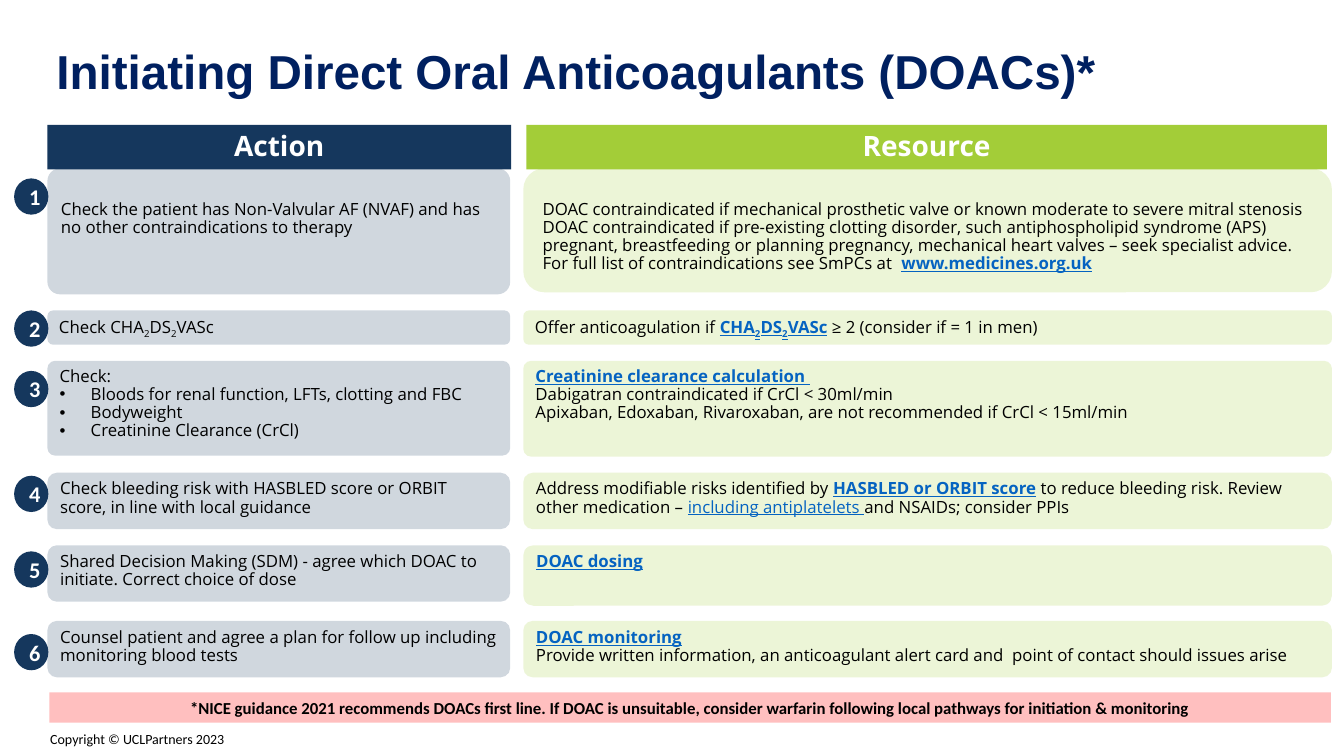
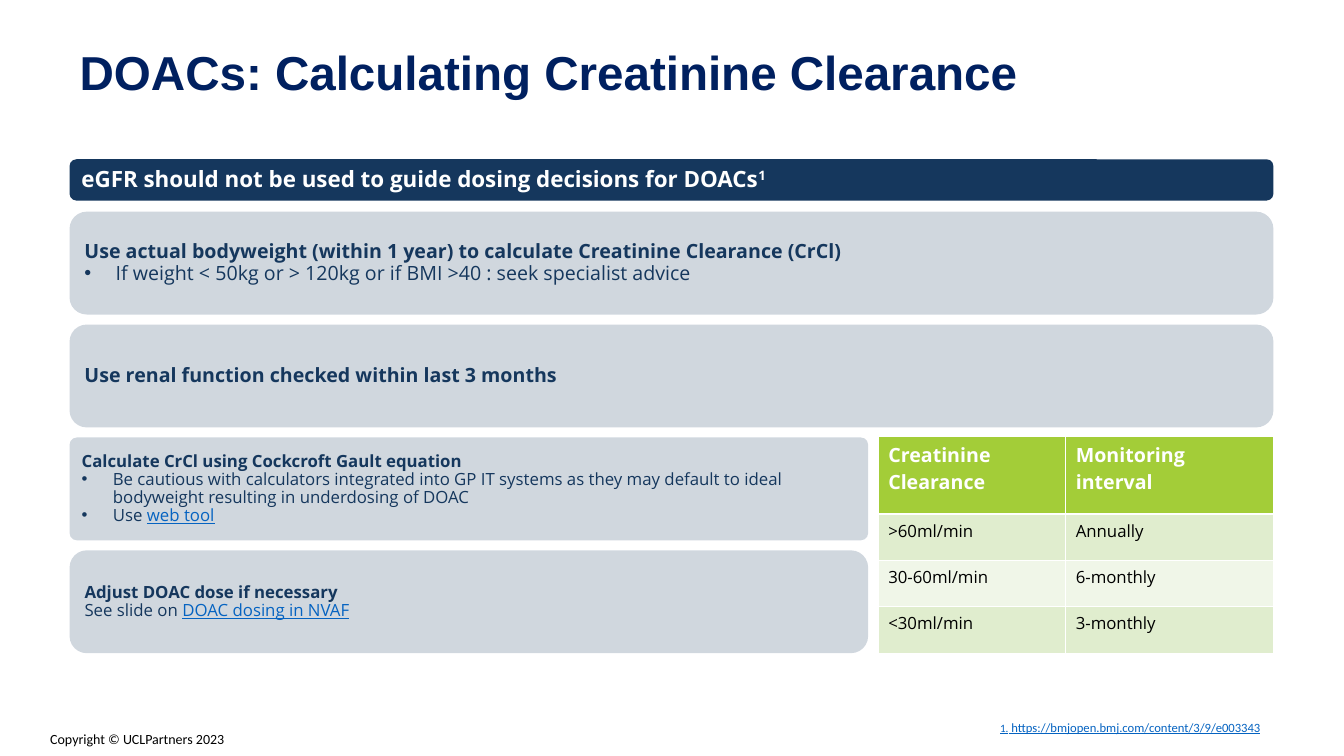
from pptx import Presentation
from pptx.dml.color import RGBColor
from pptx.enum.shapes import MSO_SHAPE as Shape
from pptx.enum.text import MSO_ANCHOR as Anchor, PP_ALIGN as Align
from pptx.oxml.ns import qn
from pptx.util import Inches, Pt
from lxml.etree import SubElement

# Shared look
NAVY = RGBColor(0x15, 0x37, 0x5D)
TITLE_BLUE = RGBColor(0x00, 0x20, 0x60)
LIME = RGBColor(0xA3, 0xCD, 0x38)
LINK_BLUE = RGBColor(0x05, 0x63, 0xC1)
RED = RGBColor(0xFF, 0x00, 0x00)
BLACK = RGBColor(0x00, 0x00, 0x00)
WHITE = RGBColor(0xFF, 0xFF, 0xFF)
BAND_FILLS = [RGBColor(0xE0, 0xED, 0xCE), RGBColor(0xF0, 0xF6, 0xE8)]
SANS, PLAIN, HEADING = "Open Sans", "Calibri", "Arial"
TINT = 20
BULLET = "•"
HANG = Inches(0.31)
BODY_SPACING = 0.9

# Run styles, laid over the base format of a box
LINK = {"color": LINK_BLUE, "underline": True}
BOLD_LINK = {**LINK, "bold": True}
BOLD = {"bold": True}
SUB = {"baseline": -25}
LINK_SUB = {**BOLD_LINK, **SUB}
SUPER = {"baseline": 30}

COPYRIGHT = "Copyright © UCLPartners 2023"

# Content of slide 1: a paragraph is a list of runs, a run is text or (text, style)
STEPS_TITLE = "Initiating Direct Oral Anticoagulants (DOACs)*"
STEPS_NOTE = ("*NICE guidance 2021 recommends DOACs first line. If DOAC is unsuitable, consider "
              "warfarin following local pathways for initiation & monitoring")
COLUMNS = [
    {"name": "Action", "left": 0.47, "width": 4.59, "header_left": 0.47,
     "header_width": 4.6, "color": NAVY},
    {"name": "Resource", "left": 5.19, "width": 8.02, "header_left": 5.22,
     "header_width": 7.94, "color": LIME},
]
STEPS = [
    {"top": 1.67, "heights": (1.25, 1.23), "badge": 0.1, "corners": (0.1, 0.17),
     "insets": ((0.1, 0.29), (0.13, 0.26)),
     "cells": (
         [["Check the patient has Non-Valvular AF (NVAF) and has no other "
           "contraindications to therapy"]],
         [["DOAC contraindicated if mechanical prosthetic valve or known moderate to "
           "severe mitral stenosis"],
          ["DOAC contraindicated if pre-existing clotting disorder, such antiphospholipid "
           "syndrome (APS) pregnant, breastfeeding or planning pregnancy, mechanical heart "
           "valves – seek specialist advice."],
          ["For full list of contraindications see SmPCs at  ",
           ("www.medicines.org.uk", BOLD_LINK)]])},
    {"top": 3.08, "heights": (0.34, 0.34), "badge": 0,
     "cells": (
         [["Check CHA", ("2", SUB), "DS", ("2", SUB), "VASc"]],
         [["Offer anticoagulation if ", ("CHA", BOLD_LINK), ("2", LINK_SUB),
           ("DS", BOLD_LINK), ("2", LINK_SUB), ("VASc", BOLD_LINK),
           " ≥ 2 (consider if = 1 in men)"]])},
    {"top": 3.58, "heights": (0.94, 0.95), "badge": 0.1, "corners": (0.08, 0.08),
     "cells": (
         [["Check:"],
          [BULLET, "Bloods for renal function, LFTs, clotting and FBC"],
          [BULLET, "Bodyweight"],
          [BULLET, "Creatinine Clearance (CrCl)"]],
         [[("Creatinine clearance calculation ", BOLD_LINK)],
          ["Dabigatran contraindicated if CrCl < 30ml/min"],
          ["Apixaban, Edoxaban, Rivaroxaban, are not recommended if CrCl < 15ml/min"]])},
    {"top": 4.69, "heights": (0.56, 0.56), "badge": 0.03,
     "cells": (
         [["Check bleeding risk with HASBLED score or ORBIT score, in line with local guidance"]],
         [["Address modifiable risks identified by ", ("HASBLED or ORBIT score", BOLD_LINK),
           " to reduce bleeding risk. Review other medication – ",
           ("including antiplatelets ", LINK), "and NSAIDs; consider PPIs"]])},
    {"top": 5.41, "heights": (0.56, 0.6), "badge": 0.06,
     "cells": (
         [["Shared Decision Making (SDM) - agree which DOAC to initiate. Correct choice of dose"]],
         [[("DOAC dosing", BOLD_LINK)]])},
    {"top": 6.16, "heights": (0.56, 0.56), "badge": 0.13,
     "cells": (
         [["Counsel patient and agree a plan for follow up including monitoring blood tests"]],
         [[("DOAC monitoring", BOLD_LINK)],
          ["Provide written information, an anticoagulant alert card and  point of contact "
           "should issues arise"]])},
]

# Content of slide 2
CLEARANCE_TITLE = "DOACs: Calculating Creatinine Clearance"
KEY_MESSAGE = [["eGFR should not be used to guide dosing decisions for DOACs", ("1", SUPER)]]
REFERENCE = [[("1.", {"size": Pt(8)}), " https://bmjopen.bmj.com/content/3/9/e003343"]]
FULL_WIDTH, PART_WIDTH = 11.94, 7.92
PANELS = [
    {"width": FULL_WIDTH, "size": 14, "text": [
        [("Use actual bodyweight (within 1 year) to calculate Creatinine Clearance (CrCl)", BOLD)],
        [BULLET, "If weight < 50kg or > 120kg or if BMI >40 : seek specialist advice"]]},
    {"width": FULL_WIDTH, "size": 14, "text": [
        [("Use renal function checked within last 3 months", BOLD)]]},
    {"width": PART_WIDTH, "size": 12, "corner": 0.07, "text": [
        [("Calculate CrCl using Cockcroft Gault equation", BOLD)],
        [BULLET, "Be cautious with calculators integrated into GP IT systems as they may "
                 "default to ideal bodyweight resulting in underdosing of DOAC"],
        [BULLET, "Use ", ("web tool", LINK)]]},
    {"width": PART_WIDTH, "size": 12, "text": [
        [("Adjust DOAC dose if necessary", BOLD)],
        ["See slide on ", ("DOAC dosing in NVAF", LINK)]]},
]
INTERVALS = [
    ("Creatinine Clearance", "Monitoring interval"),
    (">60ml/min", "Annually"),
    ("30-60ml/min", "6-monthly"),
    ("<30ml/min", "3-monthly"),
]


def base_format(size, color=BLACK, name=SANS, bold=False):
    return {"size": Pt(size), "name": name, "bold": bold, "color": color}


def write_run(paragraph, text, formats):
    run = paragraph.add_run()
    run.text = text
    for key, value in formats.items():
        if key == "color":
            run.font.color.rgb = value
        elif key == "baseline":
            run.font._element.set("baseline", str(value * 1000))
        else:
            setattr(run.font, key, value)


def write_text(frame, paragraphs, formats, align=Align.LEFT, spacing=None):
    for index, runs in enumerate(paragraphs):
        paragraph = frame.add_paragraph() if index else frame.paragraphs[0]
        if runs[0] == BULLET:
            properties = paragraph._p.get_or_add_pPr()
            properties.set("marL", str(HANG))
            properties.set("indent", str(-HANG))
            SubElement(properties, qn("a:buFont"), typeface="Arial")
            SubElement(properties, qn("a:buChar"), char=BULLET)
            runs = runs[1:]
        paragraph.alignment = align
        paragraph.line_spacing = spacing
        for run in runs:
            text, style = (run, {}) if isinstance(run, str) else run
            write_run(paragraph, text, {**formats, **style})


def add_box(slide, kind, place, color, paragraphs, formats, opacity=100, corner=None,
            anchor=Anchor.TOP, insets=(0.1, 0.05, 0.1, 0.05), **layout):
    box = slide.shapes.add_shape(kind, *map(Inches, place))
    box.shadow.inherit = False
    box.line.fill.background()
    box.fill.solid()
    box.fill.fore_color.rgb = color
    if opacity < 100:
        tone = box._element.spPr.find(qn("a:solidFill"))[0]
        SubElement(tone, qn("a:alpha"), val=str(opacity * 1000))
    if corner is not None:
        box.adjustments[0] = corner
    frame = box.text_frame
    frame.word_wrap = True
    frame.vertical_anchor = anchor
    for side, inset in zip(("left", "top", "right", "bottom"), insets):
        setattr(frame, f"margin_{side}", Inches(inset))
    write_text(frame, paragraphs, formats, **layout)


def add_label(slide, place, paragraphs, formats, wrap):
    frame = slide.shapes.add_textbox(*map(Inches, place)).text_frame
    frame.word_wrap = wrap
    write_text(frame, paragraphs, formats)


def add_titled_slide(deck, title, place):
    """Start a slide with the common title style and copyright footer."""
    slide = deck.slides.add_slide(deck.slide_layouts[5])
    heading = slide.shapes.title
    for side, length in zip(("left", "top", "width", "height"), place):
        setattr(heading, side, Inches(length))
    heading.text_frame.vertical_anchor = Anchor.MIDDLE
    write_text(heading.text_frame, [[title]], base_format(34, TITLE_BLUE, HEADING, True),
               spacing=0.9)
    add_label(slide, (0.4, 7.2, 1.96, 0.27), [[COPYRIGHT]], base_format(10, name=PLAIN), False)
    return slide


def build_steps(deck):
    slide = add_titled_slide(deck, STEPS_TITLE, (0.46, 0.38, 10.58, 0.71))

    # Action and resource cells
    for step in STEPS:
        for index, column in enumerate(COLUMNS):
            left, top = step.get("insets", ((0.1, 0.05),) * 2)[index]
            add_box(slide, Shape.ROUNDED_RECTANGLE,
                    (column["left"], step["top"], column["width"], step["heights"][index]),
                    column["color"], step["cells"][index], base_format(12), TINT,
                    step.get("corners", (None, None))[index],
                    insets=(left, top, 0.1, 0.05), spacing=BODY_SPACING)

    # Column headers and guidance band
    for column in COLUMNS:
        add_box(slide, Shape.RECTANGLE,
                (column["header_left"], 1.24, column["header_width"], 0.44), column["color"],
                [[column["name"]]], base_format(20, WHITE, bold=True),
                anchor=Anchor.MIDDLE, align=Align.CENTER, spacing=BODY_SPACING)
    add_box(slide, Shape.RECTANGLE, (0.49, 6.87, 12.71, 0.3), RED, [[STEPS_NOTE]],
            base_format(12, name=PLAIN, bold=True), 25, align=Align.CENTER)

    # Step numbers
    for number, step in enumerate(STEPS, 1):
        add_box(slide, Shape.OVAL, (0.14, step["top"] + step["badge"], 0.34, 0.36), NAVY,
                [[str(number)]], base_format(16, WHITE, PLAIN, True), anchor=Anchor.MIDDLE,
                insets=(0.07, 0, 0, 0), align=Align.CENTER)


def build_clearance(deck):
    slide = add_titled_slide(deck, CLEARANCE_TITLE, (0.69, 0.39, 9.76, 0.71))
    left, first_top, height, pitch = 0.69, 2.1, 1.02, 1.12

    # Key message and stacked panels
    add_box(slide, Shape.ROUNDED_RECTANGLE, (left, 1.58, FULL_WIDTH, 0.41), NAVY, KEY_MESSAGE,
            base_format(16, WHITE, bold=True), anchor=Anchor.MIDDLE, spacing=BODY_SPACING)
    for index, panel in enumerate(PANELS):
        add_box(slide, Shape.ROUNDED_RECTANGLE,
                (left, first_top + index * pitch, panel["width"], height), NAVY,
                panel["text"], base_format(panel["size"], NAVY), TINT, panel.get("corner"),
                Anchor.MIDDLE, spacing=BODY_SPACING)

    # Monitoring table
    widths, heights = (1.86, 2.06), (0.77, 0.46, 0.46, 0.46)
    place = (8.71, 4.33, sum(widths), sum(heights))
    table = slide.shapes.add_table(len(heights), len(widths), *map(Inches, place)).table
    for column, width in zip(table.columns, widths):
        column.width = Inches(width)
    for index, (row, height) in enumerate(zip(table.rows, heights)):
        row.height = Inches(height)
        is_header = index == 0
        formats = base_format(14, WHITE, bold=True) if is_header else base_format(12)
        for cell, text in zip(row.cells, INTERVALS[index]):
            cell.fill.solid()
            cell.fill.fore_color.rgb = LIME if is_header else BAND_FILLS[(index - 1) % 2]
            write_text(cell.text_frame, [[text]], formats)

    add_label(slide, (9.82, 7.09, 2.9, 0.28), REFERENCE,
              {**base_format(9, name=PLAIN), **LINK}, True)


def main():
    deck = Presentation()
    deck.slide_width, deck.slide_height = Inches(13.33), Inches(7.5)
    build_steps(deck)
    build_clearance(deck)
    deck.save("out.pptx")


if __name__ == "__main__":
    main()
